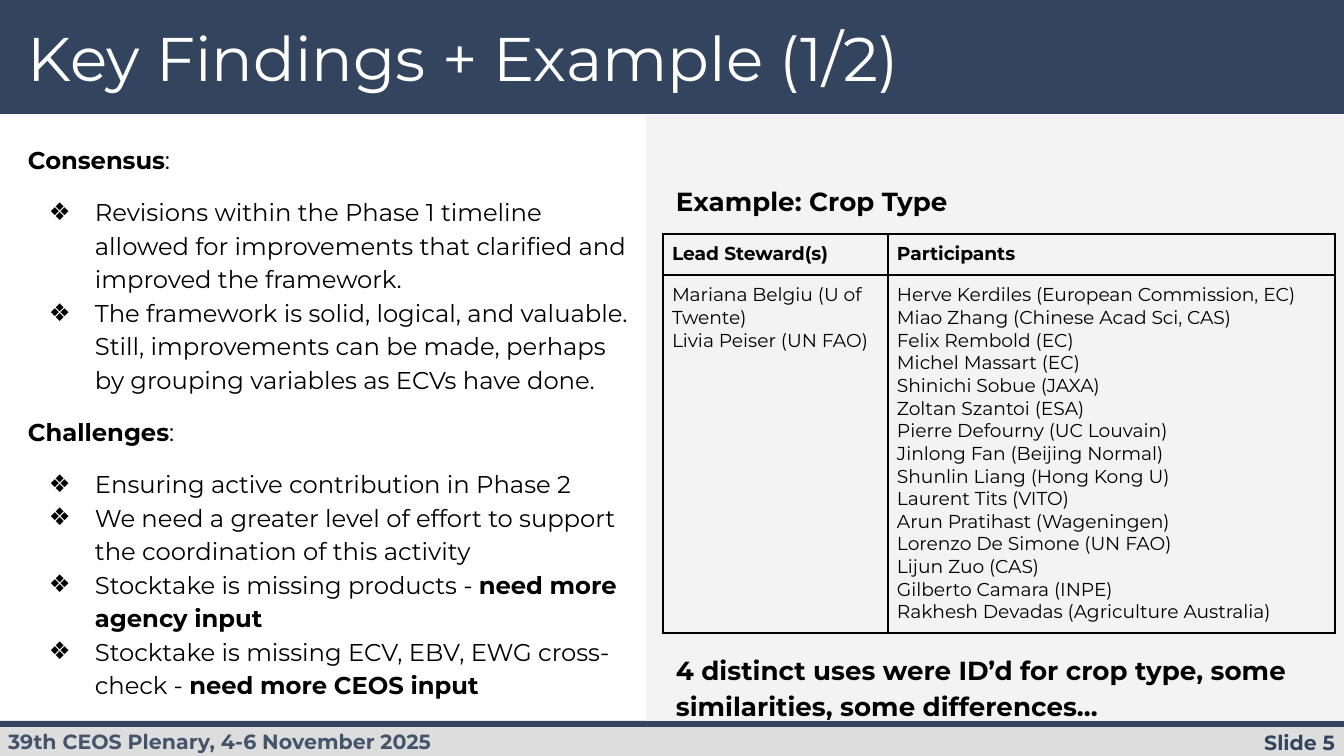
from lxml import etree
from pptx import Presentation
from pptx.dml.color import RGBColor
from pptx.enum.shapes import MSO_SHAPE as SHAPE
from pptx.enum.text import MSO_ANCHOR as ANCHOR, PP_ALIGN as ALIGN
from pptx.oxml.ns import qn
from pptx.util import Emu, Pt

NAVY = RGBColor(0x33, 0x44, 0x5F)
SLATE = RGBColor(0x44, 0x54, 0x6A)
SILVER = RGBColor(0xDD, 0xDD, 0xDD)
PALE = RGBColor(0xF3, 0xF3, 0xF3)
BLACK = RGBColor(0, 0, 0)
WHITE = RGBColor(255, 255, 255)

FINDINGS = [
    ("Consensus", [
        ("Revisions within the Phase 1 timeline allowed for improvements that "
         "clarified and improved the framework.", ""),
        ("The framework is solid, logical, and valuable. Still, improvements can "
         "be made, perhaps by grouping variables as ECVs have done.", ""),
    ]),
    ("Challenges", [
        ("Ensuring active contribution in Phase 2", ""),
        ("We need a greater level of effort to support the coordination of this "
         "activity", ""),
        ("Stocktake is missing products - ", "need more agency input"),
        ("Stocktake is missing ECV, EBV, EWG cross-check - ",
         "need more CEOS input"),
    ]),
]
STEWARDS = ["Mariana Belgiu (U of Twente)", "Livia Peiser (UN FAO)"]
PARTICIPANTS = [
    "Herve Kerdiles (European Commission, EC)",
    "Miao Zhang (Chinese Acad Sci, CAS)",
    "Felix Rembold (EC)",
    "Michel Massart (EC)",
    "Shinichi Sobue (JAXA)",
    "Zoltan Szantoi (ESA)",
    "Pierre Defourny (UC Louvain)",
    "Jinlong Fan (Beijing Normal)",
    "Shunlin Liang (Hong Kong U)",
    "Laurent Tits (VITO)",
    "Arun Pratihast (Wageningen)",
    "Lorenzo De Simone (UN FAO)",
    "Lijun Zuo (CAS)",
    "Gilberto Camara (INPE)",
    "Rakhesh Devadas (Agriculture Australia)",
]


def px(n):
    return Emu(round(n * 914400 / 134.4))


class Deck:
    font = "Montserrat"
    spacing = 1.15

    def __init__(self, width, height):
        self.prs = Presentation()
        self.prs.slide_width, self.prs.slide_height = px(width), px(height)
        self.s = self.prs.slides.add_slide(self.prs.slide_layouts[5])

    def style(self, r, size, color=BLACK, bold=False):
        f = r.font
        f.name, f.size, f.bold = self.font, Pt(size), bold
        f.color.rgb = color

    def frame(self, tf, inset_x, inset_y, anchor=ANCHOR.TOP):
        tf.word_wrap = True
        tf.vertical_anchor = anchor
        tf.margin_left = tf.margin_right = px(inset_x)
        tf.margin_top = tf.margin_bottom = px(inset_y)

    def band(self, x, y, w, h, color):
        sp = self.s.shapes.add_shape(SHAPE.RECTANGLE, px(x), px(y), px(w), px(h))
        sp.shadow.inherit = False
        sp.fill.solid()
        sp.fill.fore_color.rgb = color
        sp.line.fill.background()

    def title(self, x, y, w, h, text):
        sp = self.s.shapes.title
        sp.left, sp.top, sp.width, sp.height = px(x), px(y), px(w), px(h)
        self.s.shapes.element.append(sp.element)  # in front of the header band
        tf = sp.text_frame
        self.frame(tf, 9, 5, ANCHOR.MIDDLE)
        tf.text = text
        p = tf.paragraphs[0]
        p.alignment, p.line_spacing = ALIGN.LEFT, 0.9
        self.style(p.runs[0], 33, WHITE)

    def text(self, x, y, w, h, text, size, color=BLACK, inset=(13, 13),
             align=ALIGN.LEFT, spacing=1.0):
        sp = self.s.shapes.add_textbox(px(x), px(y), px(w), px(h))
        tf = sp.text_frame
        self.frame(tf, *inset)
        tf.text = text
        p = tf.paragraphs[0]
        p.alignment, p.line_spacing = align, spacing
        self.style(p.runs[0], size, color, True)

    def bullet(self, p):
        pPr = p._p.get_or_add_pPr()
        pPr.set("marL", str(px(67)))
        pPr.set("indent", str(px(-46)))
        etree.SubElement(pPr, qn("a:buFont")).set("typeface", self.font)
        etree.SubElement(pPr, qn("a:buChar")).set("char", "❖")

    def findings(self, x, y, w, h, sections, size):
        """Bold headings, each followed by bullets of (plain, bold) text."""
        tf = self.s.shapes.add_textbox(px(x), px(y), px(w), px(h)).text_frame
        self.frame(tf, 9, 5)

        def add(parts, before, bulleted=False):
            first = not tf.paragraphs[0].runs
            p = tf.paragraphs[0] if first else tf.add_paragraph()
            if bulleted:
                self.bullet(p)
            p.line_spacing = self.spacing
            p.space_before = Pt(0 if first else before)
            for text, bold in parts:
                if text:
                    r = p.add_run()
                    r.text = text
                    self.style(r, size, bold=bold)

        for heading, items in sections:
            add([(heading, True), (":", False)], 10)
            for i, (plain, strong) in enumerate(items):
                add([(plain, False), (strong, True)], 0 if i else 10, True)

    def border(self, cell):
        tcPr = cell._tc.get_or_add_tcPr()
        for i, side in enumerate(("lnL", "lnR", "lnT", "lnB")):
            ln = etree.Element(qn(f"a:{side}"), w=str(Pt(1)))
            fill = etree.SubElement(ln, qn("a:solidFill"))
            etree.SubElement(fill, qn("a:srgbClr")).set("val", str(BLACK))
            tcPr.insert(i, ln)

    def table(self, x, y, widths, heights, rows, size):
        """Grid whose cells are lists of lines; the first row is bold."""
        tbl = self.s.shapes.add_table(len(heights), len(widths), px(x), px(y),
                                      px(sum(widths)), px(sum(heights))).table
        tbl.first_row = tbl.horz_banding = False
        for column, w in zip(tbl.columns, widths):
            column.width = px(w)
        for i, (row, h, lines) in enumerate(zip(tbl.rows, heights, rows)):
            row.height = px(h)
            for cell, names in zip(row.cells, lines):
                cell.margin_left = cell.margin_right = px(9)
                cell.margin_top = cell.margin_bottom = px(9)
                cell.fill.background()
                self.border(cell)
                cell.text_frame.text = "\n".join(names)
                for p in cell.text_frame.paragraphs:
                    self.style(p.runs[0], size, bold=i == 0)


def main():
    d = Deck(1344, 756)
    d.band(0, 0, 1344, 114, NAVY)
    d.band(0, 725, 1344, 31, SILVER)
    d.band(0, 721, 1344, 6, NAVY)
    d.text(1132, 725, 212, 35, "Slide 5", 11, NAVY, (9, 5), ALIGN.RIGHT)
    d.text(-5, 717, 513, 52, "39th CEOS Plenary, 4-6 November 2025", 11, SLATE)
    d.band(646, 115, 698, 606, PALE)
    d.findings(19, 136, 624, 568, FINDINGS, 13)
    d.title(19, 19, 1035, 86, "Key Findings + Example (1/2)")
    d.table(663, 234, (225, 447), (41, 358),
            [(["Lead Steward(s)"], ["Participants"]), (STEWARDS, PARTICIPANTS)], 10)
    d.text(663, 168, 441, 59, "Example: Crop Type", 14, spacing=d.spacing)
    d.text(663, 637, 672, 95, "4 distinct uses were ID’d for crop type, some "
           "similarities, some differences…", 14, spacing=d.spacing)
    d.prs.save("out.pptx")


if __name__ == "__main__":
    main()
